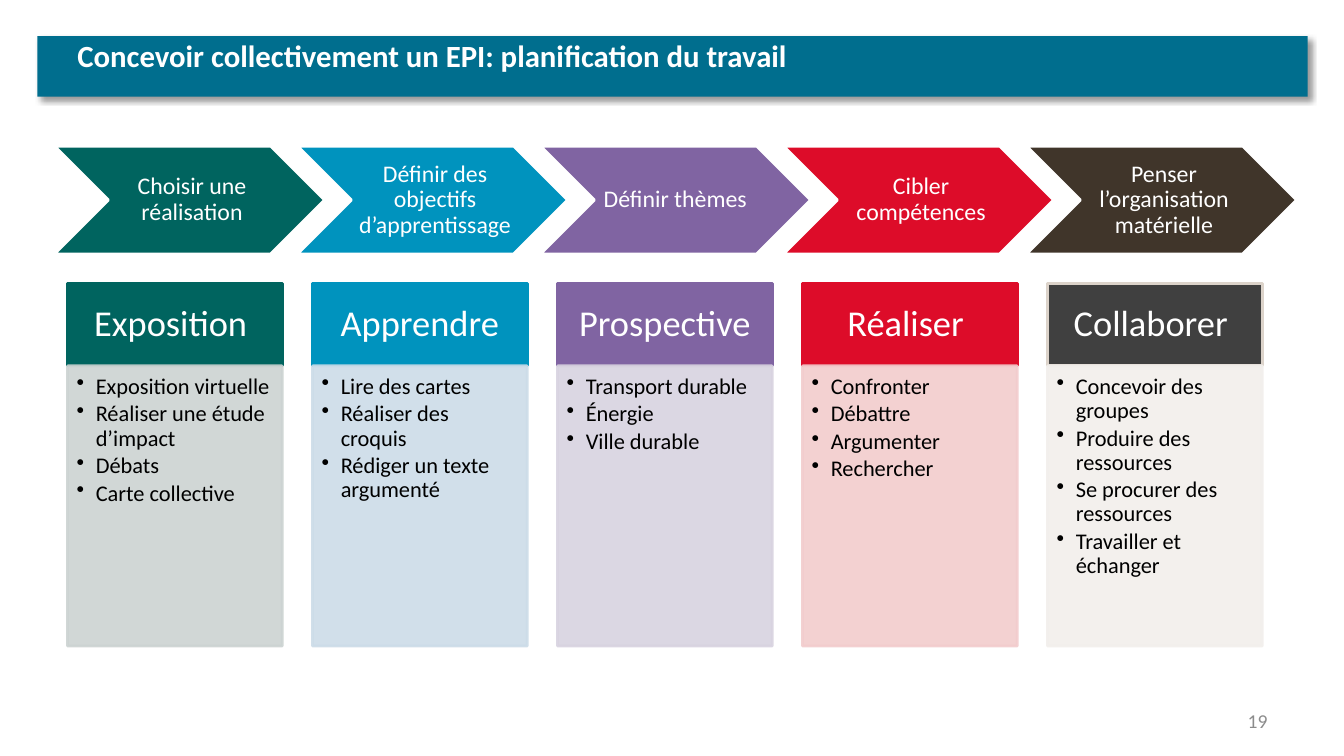
from lxml import etree
from pptx import Presentation
from pptx import util as u
from pptx.dml.color import RGBColor
from pptx.enum import shapes, text
from pptx.oxml import ns

COLORS = {
    "bar": "006E8E", "white": "FFFFFF", "black": "000000", "number": "8C8C8C",
    "green": "00645F", "pale green": "CCD3D2",
    "blue": "0093BE", "pale blue": "CCDCE8",
    "purple": "8064A2", "pale purple": "D8D3E0",
    "red": "DD0C29", "pale red": "F2CCCD",
    "brown": "40352A", "charcoal": "404040", "beige": "DCD3CA", "pale beige": "F2EFEC",
}

# Step, heading, step fill, heading fill, heading line, list fill, list items
COLUMNS = [
    ("Choisir une réalisation", "Exposition ", "green", "green", "green", "pale green",
     ["Exposition virtuelle", "Réaliser une étude d’impact", "Débats", "Carte collective"]),
    ("Définir des objectifs d’apprentissage", "Apprendre", "blue", "blue", "blue", "pale blue",
     ["Lire des cartes", "Réaliser des croquis", "Rédiger un texte argumenté"]),
    ("Définir thèmes ", "Prospective", "purple", "purple", "purple", "pale purple",
     ["Transport durable", "Énergie", "Ville durable"]),
    ("Cibler compétences", "Réaliser ", "red", "red", "red", "pale red",
     ["Confronter", "Débattre", "Argumenter", "Rechercher"]),
    ("Penser l’organisation matérielle", "Collaborer ", "brown", "charcoal", "beige", "pale beige",
     ["Concevoir des groupes", "Produire des ressources", "Se procurer des ressources",
      "Travailler et échanger"]),
]


class SlideBuilder:
    font_name = "Calibri"
    line_width = u.Pt(2)

    def __init__(self, presentation):
        self.slide = presentation.slides.add_slide(presentation.slide_layouts[6])

    def color(self, name):
        return RGBColor.from_string(COLORS[name])

    def add_shape(self, kind, box, fill, line=None, opacity=100):
        shape = self.slide.shapes.add_shape(kind, *map(u.Inches, box))
        shape.shadow.inherit = False
        shape.fill.solid()
        shape.fill.fore_color.rgb = self.color(fill)
        if line:
            shape.line.color.rgb = self.color(line)
            shape.line.width = self.line_width
        else:
            shape.line.fill.background()
        if opacity < 100:
            for color in shape._element.spPr.iter(ns.qn("a:srgbClr")):
                etree.SubElement(color, ns.qn("a:alpha"), val=str(opacity * 1000))
        return shape

    def add_shadow(self, shape):
        effects = shape._element.spPr.find(ns.qn("a:effectLst"))
        shadow = etree.SubElement(
            effects, ns.qn("a:outerShdw"), blurRad=str(u.Pt(4)), dist=str(u.Pt(3)),
            dir=str(45 * 60000), algn="tl", rotWithShape="0")
        color = etree.SubElement(shadow, ns.qn("a:srgbClr"), val=COLORS["black"])
        etree.SubElement(color, ns.qn("a:alpha"), val="40000")

    def add_text_box(self, box):
        return self.slide.shapes.add_textbox(*map(u.Inches, box))

    def set_text(self, shape, lines, size, color, insets, align=text.PP_ALIGN.LEFT,
                 anchor=text.MSO_ANCHOR.TOP, bold=False, spacing=1.0, bullets=False):
        frame = shape.text_frame
        sides = ("margin_left", "margin_top", "margin_right", "margin_bottom")
        frame_format = dict(zip(sides, map(u.Inches, insets)))
        frame_format.update(word_wrap=True, vertical_anchor=anchor)
        for name, value in frame_format.items():
            setattr(frame, name, value)
        for index, line in enumerate(lines):
            paragraph = frame.add_paragraph() if index else frame.paragraphs[0]
            paragraph.text = line
            if bullets:
                self.add_bullet(paragraph)
            for name, value in {"alignment": align, "line_spacing": spacing}.items():
                setattr(paragraph, name, value)
            font_format = {"name": self.font_name, "size": u.Pt(size), "bold": bold}
            for name, value in font_format.items():
                setattr(paragraph.font, name, value)
            paragraph.font.color.rgb = self.color(color)

    def add_bullet(self, paragraph):
        properties = paragraph._p.get_or_add_pPr()
        properties.set("marL", str(u.Inches(0.19)))
        properties.set("indent", str(u.Inches(-0.19)))
        etree.SubElement(properties, ns.qn("a:buChar"), char="•")
        paragraph.space_after = u.Pt(2.4)


def main():
    presentation = Presentation()
    presentation.slide_width = u.Inches(13.33)
    presentation.slide_height = u.Inches(7.5)
    builder = SlideBuilder(presentation)
    rectangle = shapes.MSO_SHAPE.RECTANGLE
    centered = {"align": text.PP_ALIGN.CENTER, "anchor": text.MSO_ANCHOR.MIDDLE, "spacing": 0.9}
    default_insets = (0.1, 0.05, 0.1, 0.05)

    # Title bar
    bar = builder.add_shape(rectangle, (0.37, 0.36, 12.6, 0.6), "bar")
    builder.add_shadow(bar)
    title = builder.add_text_box((0.67, 0.32, 12, 0.6))
    builder.set_text(title, ["Concevoir collectivement un EPI: planification du travail"],
                     22, "white", default_insets, bold=True)

    # Steps
    for index, (step, _, fill, *_) in enumerate(COLUMNS):
        chevron = builder.add_shape(shapes.MSO_SHAPE.CHEVRON,
                                    (0.54 + 2.41 * index, 1.45, 2.68, 1.07), fill, "white")
        builder.set_text(chevron, [step], 17, "white", (0.07, 0.02, 0.02, 0.02), **centered)

    # Headings and lists
    for index, (_, heading, _, fill, line, pale, items) in enumerate(COLUMNS):
        left = 0.67 + 2.43 * index
        header = builder.add_shape(rectangle, (left, 2.81, 2.13, 0.82), fill, line)
        builder.set_text(header, [heading], 26, "white", (0.2, 0.12, 0.2, 0.12), **centered)
        body = builder.add_shape(rectangle, (left, 3.63, 2.13, 2.78), pale, pale, opacity=90)
        builder.set_text(body, items, 16, "black", (0.09, 0.09, 0.12, 0.14),
                         spacing=0.9, bullets=True)

    # Slide number
    number = builder.add_text_box((12.02, 6.95, 0.65, 0.4))
    builder.set_text(number, ["19"], 14, "number", default_insets,
                     align=text.PP_ALIGN.RIGHT, anchor=text.MSO_ANCHOR.MIDDLE)

    presentation.save("out.pptx")


if __name__ == "__main__":
    main()
